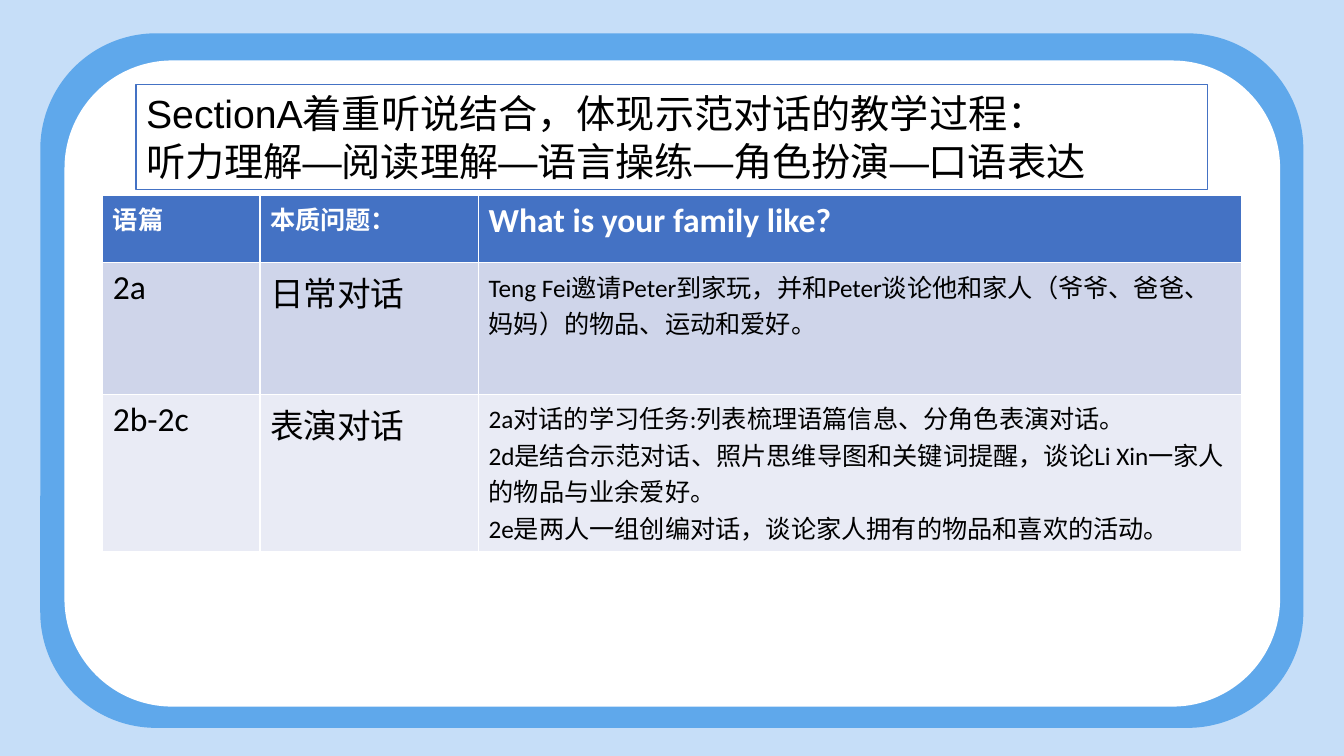
import pptx
import pptx.util
import pptx.dml.color
import pptx.enum.shapes
import pptx.enum.text
import lxml.etree

Pt = pptx.util.Pt

# Content
HEADING = [
    "SectionA着重听说结合，体现示范对话的教学过程：",
    "听力理解—阅读理解—语言操练—角色扮演—口语表达",
]
LESSONS = [
    (["语篇"], ["本质问题："], ["What is your family like?"]),
    (["2a"], ["日常对话"],
     ["Teng Fei邀请Peter到家玩，并和Peter谈论他和家人（爷爷、爸爸、妈妈）的物品、运动和爱好。"]),
    (["2b-2c"], ["表演对话"],
     ["2a对话的学习任务:列表梳理语篇信息、分角色表演对话。",
      "2d是结合示范对话、照片思维导图和关键词提醒，谈论Li Xin一家人的物品与业余爱好。",
      "2e是两人一组创编对话，谈论家人拥有的物品和喜欢的活动。"]),
]

THEME = {
    "backdrop": "C6DEF8", "frame": "5FA8EB", "panel": "FFFFFF",
    "accent": "4472C4", "ink": "000000", "header_ink": "FFFFFF",
    "row_fills": ["4472C4", "CFD5EA", "E9EBF5"],
    "heading_font": "Arial", "table_font": "Calibri", "heading_size": 28,
    "cell_sizes": [(18, 18, 24), (24, 24, 18), (24, 24, 18)],
}

# Layout, in points: left, top, width, height
SLIDE_SIZE = (960, 540)
FRAMES = [("frame", (28.8, 23.8, 902.2, 496.1)),
          ("panel", (46.1, 43.2, 868.3, 461.5))]
HEADING_BOX = (97.2, 60.5, 765.4, 74.9)
TABLE_ORIGIN = (73.4, 139.7)
COLUMN_WIDTHS = (112.3, 156.2, 545)
ROW_HEIGHTS = (48, 94, 112)


def color(name):
    return pptx.dml.color.RGBColor.from_string(THEME.get(name, name))


def paint(target, name):
    target.fill.solid()
    target.fill.fore_color.rgb = color(name)


def write(frame, lines, font, size, ink, bold=False):
    for index, line in enumerate(lines):
        paragraph = frame.paragraphs[0] if index == 0 else frame.add_paragraph()
        paragraph.alignment = pptx.enum.text.PP_ALIGN.LEFT
        run = paragraph.add_run()
        run.text = line
        run.font.name = font
        run.font.size = Pt(size)
        run.font.bold = bold
        run.font.color.rgb = color(ink)
        yield run


def main():
    deck = pptx.Presentation()
    deck.slide_width, deck.slide_height = map(Pt, SLIDE_SIZE)
    slide = deck.slides.add_slide(deck.slide_layouts[5])
    shapes = slide.shapes

    # Backdrop and rounded frame
    paint(slide.background, "backdrop")
    for fill, box in FRAMES:
        rounded = shapes.add_shape(
            pptx.enum.shapes.MSO_SHAPE.ROUNDED_RECTANGLE, *map(Pt, box))
        rounded.shadow.inherit = False
        paint(rounded, fill)
        rounded.line.fill.background()

    # Lesson table
    size = (sum(COLUMN_WIDTHS), sum(ROW_HEIGHTS))
    lessons = shapes.add_table(len(LESSONS), len(COLUMN_WIDTHS),
                               *map(Pt, TABLE_ORIGIN + size)).table
    for column, width in zip(lessons.columns, COLUMN_WIDTHS):
        column.width = Pt(width)
    for r, lesson in enumerate(LESSONS):
        lessons.rows[r].height = Pt(ROW_HEIGHTS[r])
        for c, lines in enumerate(lesson):
            cell = lessons.cell(r, c)
            paint(cell, THEME["row_fills"][r])
            list(write(cell.text_frame, lines, THEME["table_font"],
                       THEME["cell_sizes"][r][c],
                       "ink" if r else "header_ink", bold=r == 0))

    # Heading, brought in front of the frame
    heading = shapes.title
    heading.left, heading.top, heading.width, heading.height = map(Pt, HEADING_BOX)
    paint(heading, "panel")
    heading.line.color.rgb = color("accent")
    heading.line.width = Pt(1)
    frame = heading.text_frame
    frame.word_wrap = True
    frame.auto_size = pptx.enum.text.MSO_AUTO_SIZE.NONE
    frame.vertical_anchor = pptx.enum.text.MSO_ANCHOR.TOP
    for run in write(frame, HEADING, THEME["heading_font"],
                     THEME["heading_size"], "ink"):
        east_asian = lxml.etree.SubElement(
            run.font._element, pptx.oxml.ns.qn("a:ea"))
        east_asian.set("typeface", THEME["heading_font"])
    shapes._spTree.append(heading._element)

    deck.save("out.pptx")


if __name__ == "__main__":
    main()
